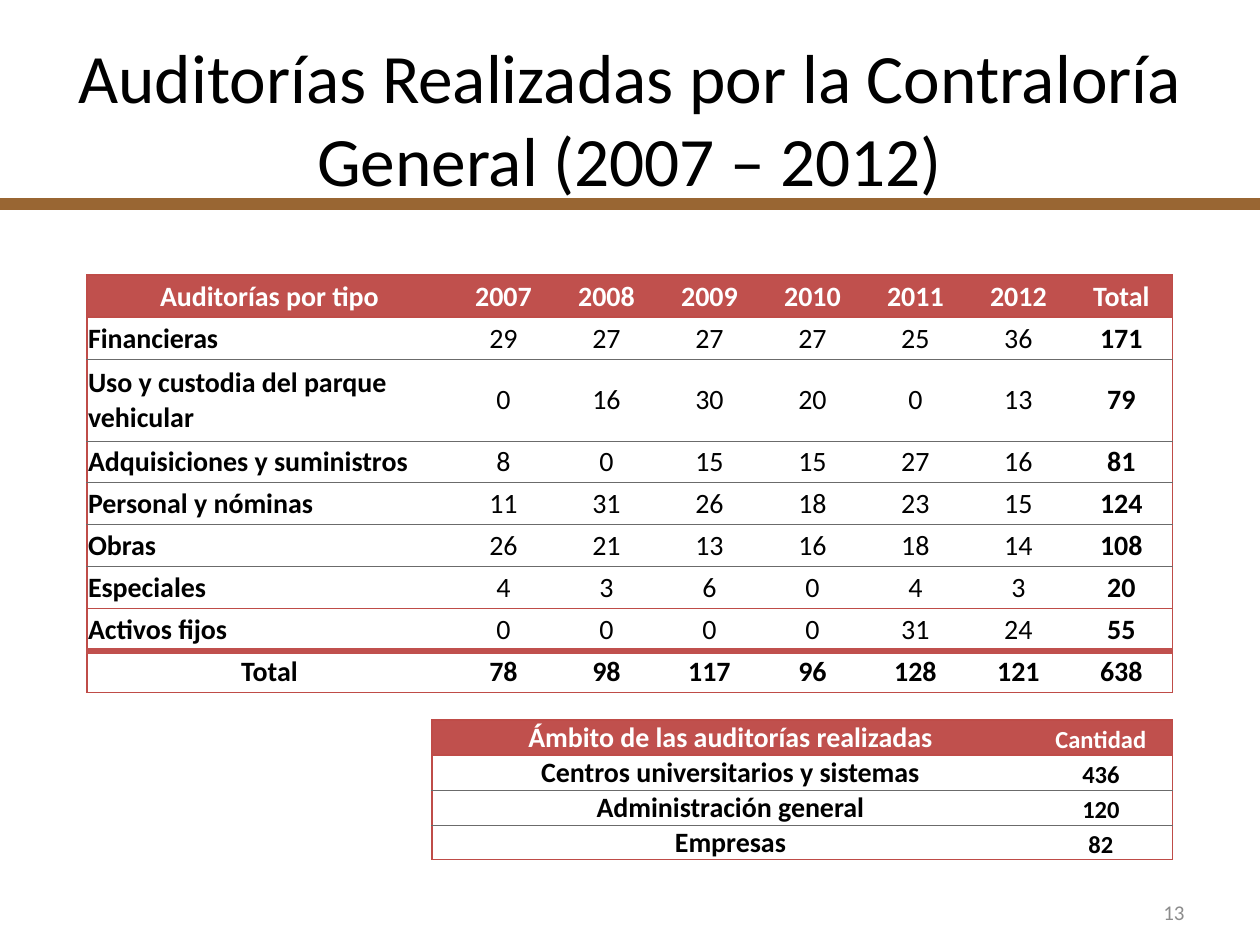
"""Build the slide on audits carried out from 2007 to 2012."""
from dataclasses import dataclass, field
from typing import Any, Optional

from lxml import etree
from pptx import Presentation
from pptx import util as u
from pptx.dml.color import RGBColor
from pptx.enum import shapes, text
from pptx.oxml import ns

SCALE = 914400 // 126
ALIGN = text.PP_ALIGN
ANCHOR = text.MSO_ANCHOR


@dataclass(frozen=True)
class Theme:
    font: str = "Calibri"
    ink: str = "000000"
    white: str = "FFFFFF"
    red: str = "C0504D"
    edge: str = "BF4C48"
    grey: str = "6B6B6B"
    faint: str = "8C8C8C"
    band: str = "996633"
    title: float = 39.6
    body: float = 16
    small: float = 14
    page: float = 12


@dataclass(frozen=True)
class Line:
    color: str
    width: float


@dataclass(frozen=True)
class Label:
    words: str
    box: tuple[int, int, int, int]
    size: float
    color: str
    align: Any
    anchor: Any


THEME = Theme()
RED = Line(THEME.edge, 0.75)
GREY = Line(THEME.grey, 0.5)
THICK = Line(THEME.red, 4)


@dataclass(frozen=True)
class Grid:
    left: int
    top: int
    cols: list[int]
    rows: list[int]
    cells: list[list[str]]
    anchor: Any
    sizes: list[float]
    plain: range = range(0)
    flush: range = range(0)
    rules: dict[int, Line] = field(default_factory=dict)


TYPES = [
    ("Financieras", 29, 27, 27, 27, 25, 36, 171),
    ("Uso y custodia del parque vehicular", 0, 16, 30, 20, 0, 13, 79),
    ("Adquisiciones y suministros", 8, 0, 15, 15, 27, 16, 81),
    ("Personal y nóminas", 11, 31, 26, 18, 23, 15, 124),
    ("Obras", 26, 21, 13, 16, 18, 14, 108),
    ("Especiales", 4, 3, 6, 0, 4, 3, 20),
    ("Activos fijos", 0, 0, 0, 0, 31, 24, 55),
    ("Total", 78, 98, 117, 96, 128, 121, 638),
]
AUDITS = Grid(
    87, 275, [365] + [103] * 7, [42, 42, 82] + [42] * 6,
    [["Auditorías por tipo", *map(str, range(2007, 2013)), "Total"]]
    + [[str(item) for item in row] for row in TYPES],
    ANCHOR.MIDDLE, [THEME.body] * 8, range(1, 7), range(1, 8),
    {7: RED, 8: THICK},
)
SCOPE = Grid(
    432, 720, [597, 144], [35] * 4,
    [["Ámbito de las auditorías realizadas", "Cantidad"],
     ["Centros universitarios y sistemas", "436"],
     ["Administración general", "120"],
     ["Empresas", "82"]],
    ANCHOR.BOTTOM, [THEME.body, THEME.small],
)
LABELS = [
    Label("Auditorías Realizadas por la Contraloría General (2007 – 2012)",
          (63, 38, 1134, 158), THEME.title, THEME.ink, ALIGN.CENTER, ANCHOR.MIDDLE),
    Label("13", (903, 881, 294, 50), THEME.page, THEME.faint, ALIGN.RIGHT,
          ANCHOR.BOTTOM),
]


def px(size: int) -> u.Emu:
    """Turn pixels into EMU."""
    return u.Emu(size * SCALE)


def style(para: Any, size: float, color: str, align: Any, bold: bool = False) -> None:
    """Format a paragraph and its runs."""
    para.alignment = align
    for run in para.runs:
        run.font.name = THEME.font
        run.font.size = u.Pt(size)
        run.font.bold = bold
        run.font.color.rgb = RGBColor.from_string(color)


def border(cell: Any, side: str, line: Optional[Line]) -> None:
    """Draw or clear one side of a cell."""
    props = cell._tc.get_or_add_tcPr()
    edge = etree.SubElement(props, ns.qn(f"a:ln{side}"))
    if line is None:
        etree.SubElement(edge, ns.qn("a:noFill"))
        return
    edge.set("w", str(u.Pt(line.width)))
    fill = etree.SubElement(edge, ns.qn("a:solidFill"))
    etree.SubElement(fill, ns.qn("a:srgbClr"), val=line.color)


def rule(grid: Grid, row: int) -> Line:
    """Pick the line that runs above a row."""
    outer = row in (0, 1, len(grid.rows))
    return grid.rules.get(row, RED if outer else GREY)


def fill_cell(grid: Grid, cell: Any, row: int, col: int) -> None:
    """Write and format one cell."""
    head = row == 0
    body = 0 < row < len(grid.rows) - 1
    cell.text_frame.text = grid.cells[row][col]
    cell.vertical_anchor = grid.anchor
    cell.margin_left = cell.margin_right = cell.margin_top = px(1)
    cell.margin_bottom = 0
    left = col == 0 and row in grid.flush and row < len(grid.rows)
    if left and grid.cells[row][col] == "Total":
        left = False
    style(cell.text_frame.paragraphs[0], grid.sizes[col],
          THEME.white if head else THEME.ink,
          ALIGN.LEFT if left else ALIGN.CENTER,
          not (body and col in grid.plain))
    border(cell, "L", RED if col == 0 else None)
    border(cell, "R", RED if col == len(grid.cols) - 1 else None)
    border(cell, "T", rule(grid, row))
    border(cell, "B", rule(grid, row + 1))
    if head:
        cell.fill.solid()
        cell.fill.fore_color.rgb = RGBColor.from_string(THEME.red)
    else:
        cell.fill.background()


def add_grid(slide: Any, grid: Grid) -> None:
    """Add a table."""
    table = slide.shapes.add_table(
        len(grid.rows), len(grid.cols), px(grid.left), px(grid.top),
        px(sum(grid.cols)), px(sum(grid.rows))).table
    table.first_row = table.horz_banding = False
    for col, width in zip(table.columns, grid.cols):
        col.width = px(width)
    for row, height in enumerate(grid.rows):
        table.rows[row].height = px(height)
        for col in range(len(grid.cols)):
            fill_cell(grid, table.cell(row, col), row, col)


def add_label(slide: Any, label: Label) -> None:
    """Add a text box."""
    frame = slide.shapes.add_textbox(*map(px, label.box)).text_frame
    frame.word_wrap = True
    frame.vertical_anchor = label.anchor
    frame.text = label.words
    style(frame.paragraphs[0], label.size, label.color, label.align)


def add_band(slide: Any) -> None:
    """Add the line under the title."""
    band = slide.shapes.add_connector(
        shapes.MSO_CONNECTOR.STRAIGHT, px(0), px(204), px(1260), px(204))
    band.line.color.rgb = RGBColor.from_string(THEME.band)
    band.line.width = u.Pt(7)
    etree.SubElement(band._element.spPr, ns.qn("a:effectLst"))


def main() -> None:
    """Build and save the slide."""
    deck = Presentation()
    deck.slide_width, deck.slide_height = px(1260), px(945)
    slide = deck.slides.add_slide(deck.slide_layouts[6])
    add_band(slide)
    for label in LABELS:
        add_label(slide, label)
    for grid in (AUDITS, SCOPE):
        add_grid(slide, grid)
    deck.save("out.pptx")


if __name__ == "__main__":
    main()
